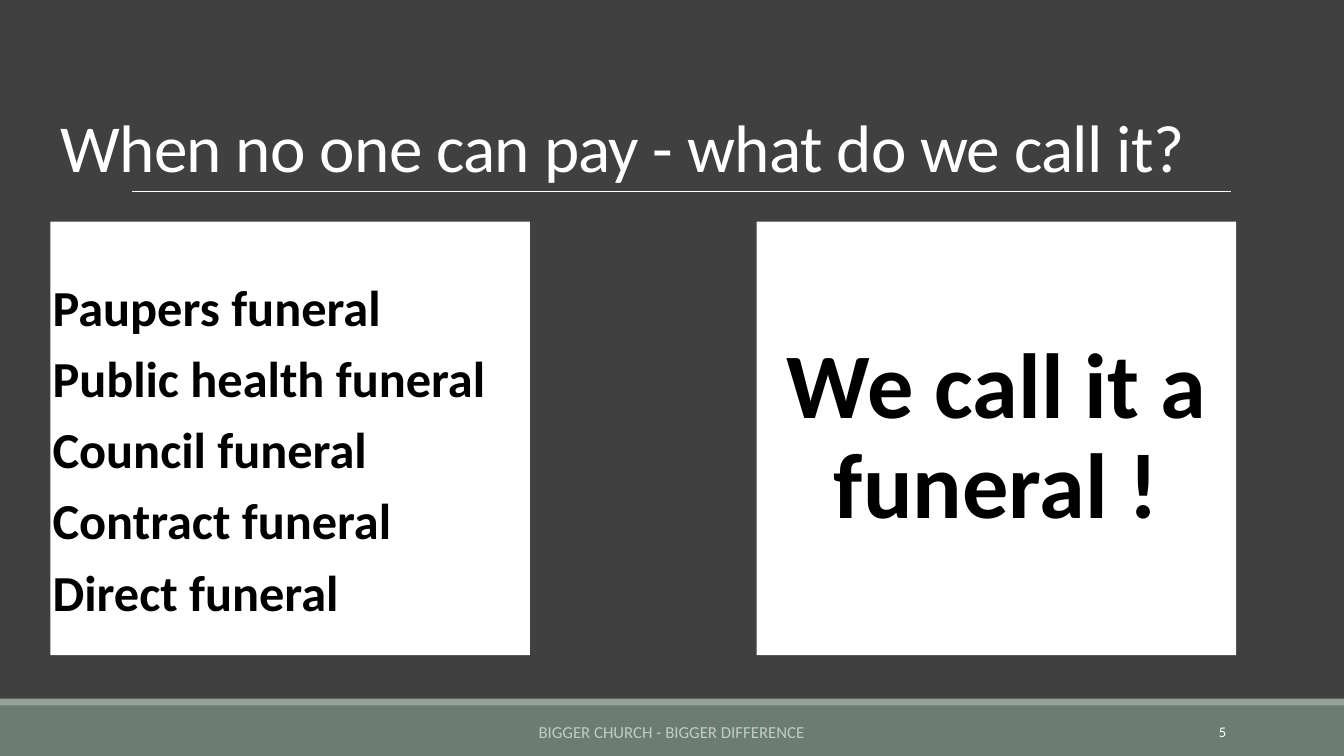
from dataclasses import dataclass
from lxml import etree
from pptx import Presentation
from pptx import util as u
from pptx.dml.color import RGBColor
from pptx.enum import shapes, text
from pptx.oxml.ns import qn


@dataclass(frozen=True)
class Theme:
    font: str = "Calibri"
    back: str = "404040"
    band: str = "6B7D72"
    edge: str = "93A299"
    light: str = "FFFFFF"
    dark: str = "000000"
    title: float = 48
    answer: float = 66
    names: float = 36
    footer: float = 12
    number: float = 10.5


theme = Theme()


def add_box(s, left, top, width, height, color):
    sp = s.shapes.add_shape(shapes.MSO_SHAPE.RECTANGLE, u.Pt(left), u.Pt(top), u.Pt(width), u.Pt(height))
    sp.shadow.inherit = False
    sp.fill.solid()
    sp.fill.fore_color.rgb = RGBColor.from_string(color)
    sp.line.fill.background()
    return sp


def style(p, size, color, align, bold=False):
    p.alignment = align
    p.font.name = theme.font
    p.font.size = u.Pt(size)
    p.font.bold = bold
    p.font.color.rgb = RGBColor.from_string(color)


prs = Presentation()
prs.slide_width, prs.slide_height = u.Pt(960), u.Pt(540)
s = prs.slides.add_slide(prs.slide_layouts[5])
s.background.fill.solid()
s.background.fill.fore_color.rgb = RGBColor.from_string(theme.back)

add_box(s, 0, 504, 960, 36, theme.band)
add_box(s, 0, 499, 960, 5, theme.edge)

rule = s.shapes.add_connector(shapes.MSO_CONNECTOR.STRAIGHT, u.Pt(94.3), u.Pt(136.8), u.Pt(879), u.Pt(136.8))
rule.line.color.rgb = RGBColor.from_string(theme.light)
rule.line.width = u.Pt(0.5)
etree.SubElement(rule.element.spPr, qn("a:effectLst"))

title = s.shapes.title
title.left, title.top, title.width, title.height = u.Pt(36), u.Pt(18), u.Pt(863), u.Pt(118.8)
tf = title.text_frame
tf.text = "When no one can pay - what do we call it?"
tf.word_wrap = True
tf.auto_size = text.MSO_AUTO_SIZE.NONE
tf.vertical_anchor = text.MSO_ANCHOR.BOTTOM
p = tf.paragraphs[0]
p.line_spacing = 0.85
style(p, theme.title, theme.light, text.PP_ALIGN.LEFT)
p.runs[0].font._element.set("spc", "-50")

footers = [
    ("BIGGER CHURCH - BIGGER DIFFERENCE", 290, 379.5, theme.footer, text.PP_ALIGN.CENTER),
    ("5", 780, 103, theme.number, text.PP_ALIGN.RIGHT),
]
for words, left, width, size, align in footers:
    sp = s.shapes.add_textbox(u.Pt(left), u.Pt(508.5), u.Pt(width), u.Pt(28.8))
    tf = sp.text_frame
    tf.word_wrap = True
    tf.vertical_anchor = text.MSO_ANCHOR.MIDDLE
    p = tf.paragraphs[0]
    r = p.add_run()
    r.text = words
    style(p, size, theme.light, align)
    if size == theme.footer:
        r.font.size = u.Pt(size)
        r.font.color.rgb = RGBColor.from_string(theme.light)
        color = r.font._element.find(".//" + qn("a:srgbClr"))
        etree.SubElement(color, qn("a:alpha"), val="60000")

names = ["Paupers funeral", "Public health funeral", "Council funeral", "Contract funeral", "Direct funeral"]
panels = [
    (36, names, theme.names, text.PP_ALIGN.LEFT, 21.5),
    (540.5, ["We call it a funeral !"], theme.answer, text.PP_ALIGN.CENTER, 1.5),
]
for left, lines, size, align, inset in panels:
    sp = add_box(s, left, 158.4, 342.5, 309.6, theme.light)
    tf = sp.text_frame
    tf.word_wrap = True
    tf.vertical_anchor = text.MSO_ANCHOR.MIDDLE
    tf.margin_left = tf.margin_right = tf.margin_bottom = u.Pt(1.5)
    tf.margin_top = u.Pt(inset)
    for i, line in enumerate(lines):
        p = tf.paragraphs[0] if i == 0 else tf.add_paragraph()
        p.text = line
        p.line_spacing = 0.9
        if i:
            p.space_before = u.Pt(12)
        style(p, size, theme.dark, align, bold=True)

prs.save("out.pptx")
